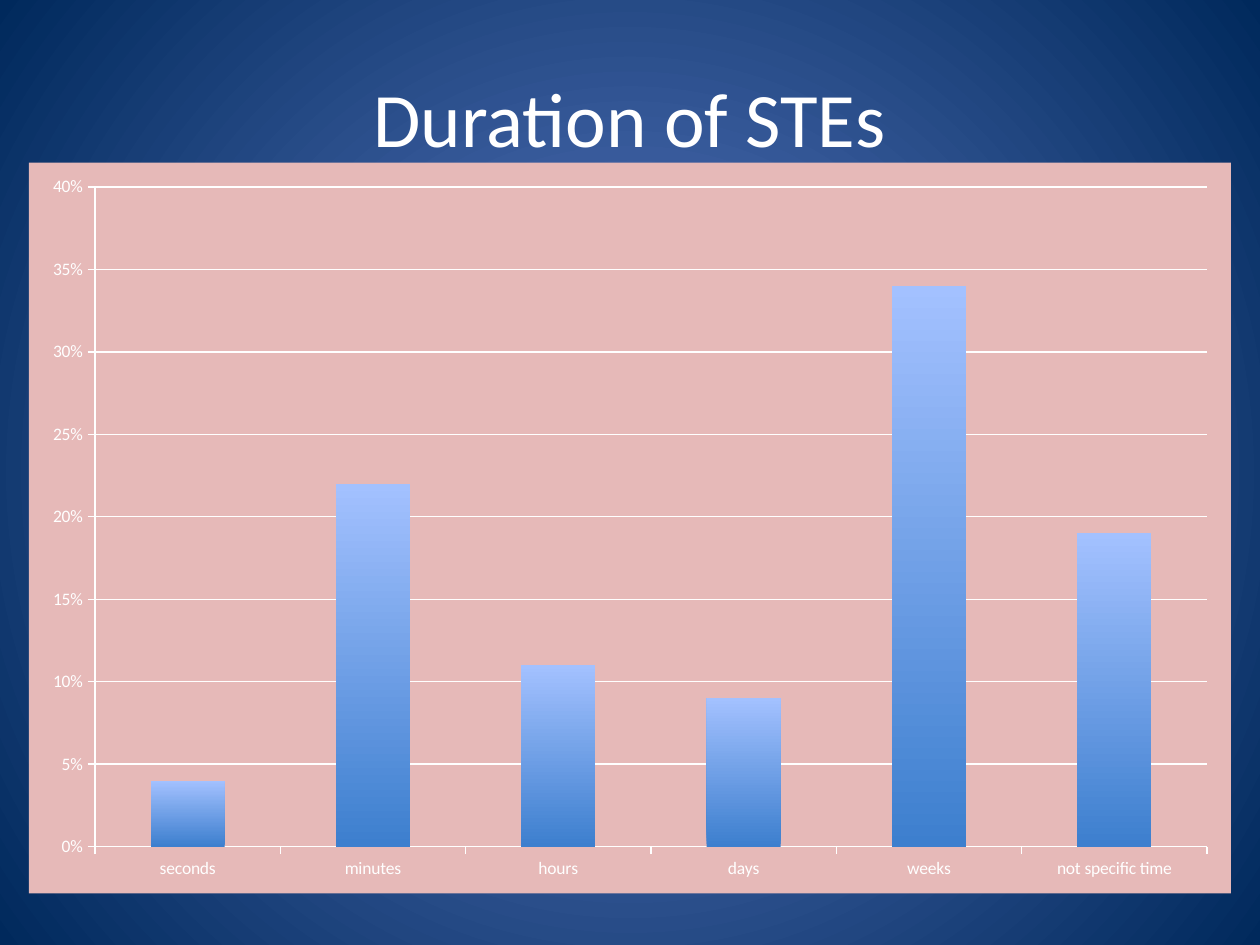
"""Build the slide that charts the duration of STEs."""
from dataclasses import dataclass

from lxml.etree import SubElement
from pptx import Presentation
from pptx.chart.data import CategoryChartData
from pptx.dml.color import RGBColor
from pptx.dml.fill import FillFormat
from pptx.enum.chart import XL_CHART_TYPE, XL_TICK_MARK
from pptx.enum.text import MSO_ANCHOR, PP_ALIGN
from pptx.oxml import parse_xml
from pptx.oxml.ns import nsdecls, qn
from pptx.util import Inches, Pt

FONT = "Calibri"
WHITE = "FFFFFF"
PANEL = "E6B9B8"
BACKGROUND = ("5E7CC5", "00295C")
BAR_GRADIENT = ("3D7FCE", "A3C1FF")


@dataclass(frozen=True)
class Box:
    left: float
    top: float
    width: float
    height: float

    def lengths(self) -> tuple:
        return tuple(Inches(n) for n in (self.left, self.top, self.width, self.height))


@dataclass(frozen=True)
class Duration:
    label: str
    share: float


DURATIONS = (
    Duration("seconds", 0.04),
    Duration("minutes", 0.22),
    Duration("hours", 0.11),
    Duration("days", 0.09),
    Duration("weeks", 0.34),
    Duration("not specific time", 0.19),
)


def color(value: str) -> RGBColor:
    return RGBColor.from_string(value)


def set_attributes(target, values: dict) -> None:
    for name, value in values.items():
        setattr(target, name, value)


def format_font(font, size: float) -> None:
    set_attributes(font, {"name": FONT, "size": Pt(size)})
    font.color.rgb = color(WHITE)


def fill_gradient(fill: FillFormat, colors: tuple) -> None:
    fill.gradient()
    for stop, value in zip(fill.gradient_stops, colors):
        stop.color.rgb = color(value)


def paint_background(slide) -> None:
    fill_gradient(slide.background.fill, BACKGROUND)
    gradient = slide.element.find(".//" + qn("a:gradFill"))
    gradient.remove(gradient.find(qn("a:lin")))
    circle = SubElement(gradient, qn("a:path"), path="circle")
    sides = dict.fromkeys("ltrb", "50000")
    SubElement(circle, qn("a:fillToRect"), sides)


def add_title(slide, text: str, box: Box) -> None:
    title = slide.shapes.title
    set_attributes(title, dict(zip(("left", "top", "width", "height"), box.lengths())))
    title.text_frame.text = text
    title.text_frame.vertical_anchor = MSO_ANCHOR.MIDDLE
    paragraph = title.text_frame.paragraphs[0]
    paragraph.alignment = PP_ALIGN.CENTER
    format_font(paragraph.runs[0].font, 44)


def paint_chart_area(chart, value: str) -> None:
    properties = parse_xml(
        f'<c:spPr {nsdecls("c", "a")}><a:solidFill><a:srgbClr val="{value}"/></a:solidFill>'
        "<a:ln><a:noFill/></a:ln></c:spPr>"
    )
    chart.element.find(qn("c:chart")).addnext(properties)


def format_line(line) -> None:
    line.color.rgb = color(WHITE)
    line.width = Pt(0.75)


def add_duration_chart(slide, durations: tuple, box: Box) -> None:
    data = CategoryChartData(number_format="0%")
    data.categories = [duration.label for duration in durations]
    data.add_series("Series 1", [duration.share for duration in durations])
    frame = slide.shapes.add_chart(XL_CHART_TYPE.COLUMN_STACKED, *box.lengths(), data)
    chart = frame.chart
    set_attributes(chart, {"has_legend": False, "has_title": False})
    format_font(chart.font, 10)
    paint_chart_area(chart, PANEL)

    plot = chart.plots[0]
    set_attributes(plot, {"gap_width": 150, "overlap": 100, "vary_by_categories": False})
    bar_fill = plot.series[0].format.fill
    fill_gradient(bar_fill, BAR_GRADIENT)
    bar_fill.gradient_angle = 90

    for axis in (chart.category_axis, chart.value_axis):
        set_attributes(axis, {
            "major_tick_mark": XL_TICK_MARK.OUTSIDE,
            "minor_tick_mark": XL_TICK_MARK.NONE,
        })
        format_line(axis.format.line)
    set_attributes(chart.value_axis, {
        "minimum_scale": 0,
        "maximum_scale": 0.4,
        "major_unit": 0.05,
        "has_major_gridlines": True,
    })
    format_line(chart.value_axis.major_gridlines.format.line)
    labels = chart.value_axis.tick_labels
    set_attributes(labels, {"number_format": "0%", "number_format_is_linked": False})


def main() -> None:
    presentation = Presentation()
    set_attributes(presentation, {"slide_width": Inches(10), "slide_height": Inches(7.5)})
    slide = presentation.slides.add_slide(presentation.slide_layouts.get_by_name("Title Only"))
    paint_background(slide)
    add_title(slide, "Duration of STEs", Box(0.5, 0.3, 9, 1.25))
    add_duration_chart(slide, DURATIONS, Box(0.23, 1.29, 9.54, 5.8))
    presentation.save("out.pptx")


if __name__ == "__main__":
    main()
